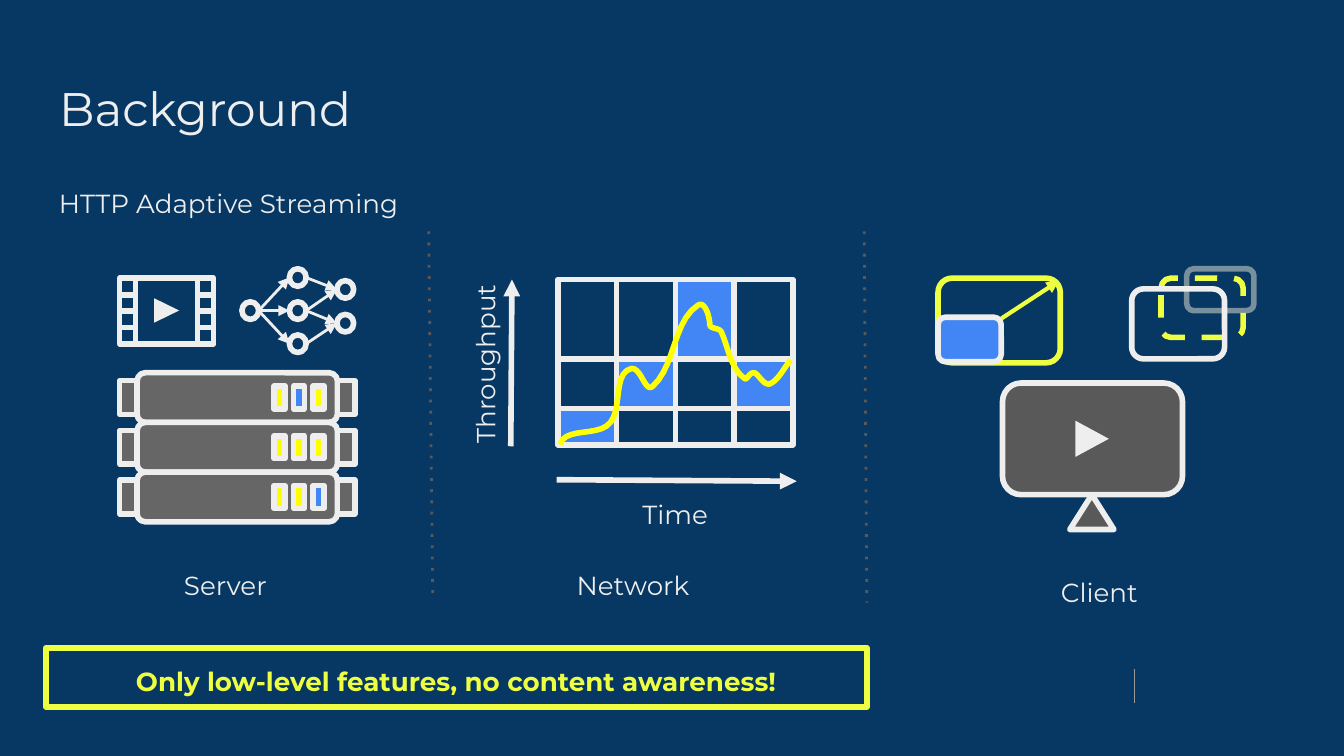
from dataclasses import dataclass
from lxml.etree import SubElement
from pptx import Presentation
from pptx.dml.color import RGBColor
from pptx.enum.shapes import MSO_CONNECTOR, MSO_SHAPE as Shape
from pptx.enum.text import MSO_ANCHOR, MSO_AUTO_SIZE, PP_ALIGN as Align
from pptx.oxml.ns import qn
from pptx.util import Inches, Pt

NAVY = RGBColor(0x07, 0x37, 0x63)
PALE = RGBColor(0xEE, 0xEE, 0xEE)
BLUE = RGBColor(0x42, 0x85, 0xF4)
YELLOW = RGBColor(0xFF, 0xFF, 0x00)
LIME = RGBColor(0xEE, 0xFF, 0x41)
STEEL = RGBColor(0x66, 0x66, 0x66)
DARK = RGBColor(0x59, 0x59, 0x59)
SLATE = RGBColor(0x78, 0x90, 0x9C)
RULE = RGBColor(0x99, 0x99, 0x99)

FONT = "Montserrat"
# Start point, then Bezier triples, in percent of the curve's box
THROUGHPUT_START = (0, 100)
THROUGHPUT_CURVES = [
    ((2, 87), (17, 95), (22, 84)), ((27, 73), (23, 49), (31, 46)),
    ((35, 45), (37, 63), (40, 59)), ((50, 45), (49, 12), (60, 1)),
    ((63, -2), (65, 10), (65, 15)), ((65, 18), (69, 17), (70, 20)),
    ((73, 31), (74, 46), (80, 53)), ((81, 55), (82, 49), (84, 49)),
    ((86, 49), (88, 58), (91, 57)), ((95, 54), (97, 46), (100, 40)),
]


@dataclass(frozen=True)
class Box:
    """A box in inches; its parts are given in percent of its size."""
    x: float
    y: float
    w: float
    h: float

    def point(self, x, y):
        return self.x + x * self.w / 100, self.y + y * self.h / 100

    def share(self, x, y, w, h):
        return Box(*self.point(x, y), w * self.w / 100, h * self.h / 100)

    def row(self, index, count):
        return self.share(0, 100 * index / count, 100, 100 / count)

    def emu(self):
        return [Inches(v) for v in (self.x, self.y, self.w, self.h)]


def apply_format(target, values):
    for key, value in values.items():
        setattr(target, key, value)


def style_line(drawn, color, width, dash=None, arrow=False):
    drawn.line.color.rgb = color
    drawn.line.width = Pt(width)
    outline = drawn._element.spPr.find(qn("a:ln"))
    if dash:
        SubElement(outline, qn("a:prstDash"), val=dash)
    if arrow:
        SubElement(outline, qn("a:tailEnd"), type="triangle")


def add_form(shapes, kind, box, fill=None, line=PALE, dash=None, rotation=0):
    form = shapes.add_shape(kind, *box.emu())
    form.shadow.inherit = False
    form.rotation = rotation
    if fill is None:
        form.fill.background()
    else:
        form.fill.solid()
        form.fill.fore_color.rgb = fill
    if line is None:
        form.line.fill.background()
    else:
        style_line(form, line, 3, dash)
    return form


def add_line(shapes, start, end, color, width, dash=None, arrow=False):
    ends = [Inches(v) for v in (*start, *end)]
    connector = shapes.add_connector(MSO_CONNECTOR.STRAIGHT, *ends)
    style_line(connector, color, width, dash, arrow)
    SubElement(connector._element.spPr, qn("a:effectLst"))


def write(holder, text, align=Align.CENTER, spacing=1.15, size=14, color=PALE, bold=False):
    frame = holder.text_frame
    apply_format(frame, dict(text=text, word_wrap=True, auto_size=MSO_AUTO_SIZE.NONE,
                             vertical_anchor=MSO_ANCHOR.TOP, margin_left=Inches(0.1),
                             margin_top=Inches(0.1), margin_bottom=Inches(0.1),
                             margin_right=Inches(0.1 if align == Align.CENTER else 0)))
    paragraph = frame.paragraphs[0]
    apply_format(paragraph, dict(alignment=align, line_spacing=spacing))
    font = paragraph.runs[0].font
    apply_format(font, dict(name=FONT, size=Pt(size), bold=bold))
    font.color.rgb = color


def add_label(shapes, box, text, align=Align.CENTER, rotation=0):
    label = shapes.add_textbox(*box.emu())
    label.rotation = rotation
    write(label, text, align)


def draw_film(shapes, box):
    add_form(shapes, Shape.RECTANGLE, box.share(17, 0, 66, 100))
    for left in (0, 83):
        for i in range(4):
            add_form(shapes, Shape.RECTANGLE, box.share(left, 0, 17, 100).row(i, 4))
    add_form(shapes, Shape.ISOSCELES_TRIANGLE, box.share(37, 30, 26, 38),
             PALE, None, rotation=90)


def draw_neural_net(shapes, box):
    node_w, node_h = 15, 21
    layers = [[0.5], [0, 0.5, 1], [0.18, 0.69]]
    nodes = [[box.share(i * (100 - node_w) / 2, y * (100 - node_h), node_w, node_h)
              for y in layer] for i, layer in enumerate(layers)]
    for layer in nodes:
        for node in layer:
            add_form(shapes, Shape.OVAL, node)
    links = [[(0, 0), (0, 1), (0, 2)], [(0, 0), (1, 0), (1, 1), (2, 1)]]
    for i, pairs in enumerate(links):
        for source, target in pairs:
            add_line(shapes, nodes[i][source].point(100, 50),
                     nodes[i + 1][target].point(0, 50), PALE, 1.5, arrow=True)


def draw_rack_unit(shapes, box, lights):
    add_form(shapes, Shape.ROUNDED_RECTANGLE, box.share(7.4, 0, 85.2, 100), STEEL)
    for left in (0, 92.6):
        add_form(shapes, Shape.RECTANGLE, box.share(left, 16, 7.4, 68), STEEL)
    for i, light in enumerate(lights):
        add_form(shapes, Shape.RECTANGLE, box.share(65.7 + 8.3 * i, 27, 4.6, 46), light)


def draw_server(shapes, box):
    draw_film(shapes.add_group_shape().shapes, box.share(0, 3.7, 40, 25.8))
    draw_neural_net(shapes.add_group_shape().shapes, box.share(52, 0, 47.5, 32.8))
    rack = shapes.add_group_shape().shapes
    lights = [(YELLOW, BLUE, YELLOW), (YELLOW,) * 3, (YELLOW, YELLOW, BLUE)]
    for i, colors in enumerate(lights):
        draw_rack_unit(rack, box.share(0, 40.7, 100, 58.4).row(i, 3), colors)
    add_label(shapes, box.share(-10, 110.5, 110, 23), "Server")


def draw_throughput_curve(shapes, box):
    def to_emu(x, y):
        return tuple(Inches(v) for v in box.point(x, y))

    steps, start, points = 10, THROUGHPUT_START, []
    for first, second, end in THROUGHPUT_CURVES:
        for t in (k / steps for k in range(1, steps + 1)):
            weights = ((1 - t) ** 3, 3 * t * (1 - t) ** 2, 3 * t * t * (1 - t), t ** 3)
            points.append(to_emu(*(sum(w * v for w, v in zip(weights, axis))
                                   for axis in zip(start, first, second, end))))
        start = end
    builder = shapes.build_freeform(*to_emu(*THROUGHPUT_START))
    builder.add_line_segments(points, close=False)
    curve = builder.convert_to_shape()
    curve.shadow.inherit = False
    curve.fill.background()
    style_line(curve, YELLOW, 3)


def draw_network(shapes, box):
    # Bitrate grid with the chosen level of each segment filled
    plot = box.share(18.2, 0, 79.5, 64.7)
    group = shapes.add_group_shape().shapes
    levels = [(0, 48), (48, 30), (78, 22)]
    for column, chosen in enumerate((2, 1, 0, 1)):
        for i, (top, height) in enumerate(levels):
            add_form(group, Shape.RECTANGLE, plot.share(column * 25, top, 25, height),
                     BLUE if i == chosen else None)
    draw_throughput_curve(group, plot.share(1, 14.6, 98, 85.4))
    # Axes
    add_line(shapes, box.point(17.8, 78.4), box.point(99, 79), PALE, 3, arrow=True)
    add_line(shapes, box.point(2.3, 65.3), box.point(2.7, 0), PALE, 3, arrow=True)
    add_label(shapes, box.share(42.3, 78.5, 32, 23), "Time", Align.LEFT)
    add_label(shapes, box.share(-39.5, 20.5, 63.7, 23.7), "Throughput", Align.LEFT, 270)
    add_label(shapes, box.share(0, 106.3, 87.3, 23), "Network")


def draw_client(shapes, box):
    rounded, triangle = Shape.ROUNDED_RECTANGLE, Shape.ISOSCELES_TRIANGLE
    # Player: screen, play mark and stand
    player = shapes.add_group_shape().shapes
    add_form(player, rounded, box.share(20.4, 43.6, 57, 42.6), DARK)
    add_form(player, triangle, box.share(43, 58.5, 11.5, 12.8), PALE, None, rotation=90)
    add_form(player, triangle, box.share(41.7, 86.2, 14, 13.3), DARK)
    add_label(shapes, box.share(10.2, 110.3, 81.7, 22.6), "Client")
    # Scaling window
    scaling = shapes.add_group_shape().shapes
    add_form(scaling, rounded, box.share(0, 3.6, 38.7, 32.3), line=LIME)
    add_form(scaling, rounded, box.share(0, 18.5, 20, 17), BLUE)
    add_line(scaling, box.point(20, 19), box.point(38.3, 4.6), LIME, 2.25, arrow=True)
    # Frames in depth, far to near
    frames = shapes.add_group_shape().shapes
    add_form(frames, rounded, box.share(78.7, 0, 21.3, 16), line=SLATE)
    add_form(frames, rounded, box.share(70.6, 3.6, 26, 22.6), line=LIME, dash="dash")
    add_form(frames, rounded, box.share(61.3, 7.7, 29.4, 26.7))


def draw_header(slide, box):
    title = slide.shapes.title
    apply_format(title, dict(zip(("left", "top", "width", "height"),
                                 box.share(0, 0, 100, 52).emu())))
    write(title, "Background", Align.LEFT, 1, 25.2)
    add_label(slide.shapes, box.share(0, 63.6, 47, 36.4),
              "HTTP Adaptive Streaming", Align.LEFT)


def main():
    page = Box(0, 0, 10, 10 * 9 / 16)
    deck = Presentation()
    deck.slide_width, deck.slide_height = Inches(page.w), Inches(page.h)
    slide = deck.slides.add_slide(deck.slide_layouts[5])
    slide.background.fill.solid()
    slide.background.fill.fore_color.rgb = NAVY
    shapes = slide.shapes

    add_line(shapes, page.point(84.4, 88.5), page.point(84.4, 93), RULE, 0.75)
    draw_header(slide, Box(0.34, 0.49, 9.32, 1.21))
    draw_server(shapes, Box(0.89, 2, 1.75, 1.9))
    draw_network(shapes, Box(3.75, 2.08, 2.2, 1.9))
    draw_client(shapes, Box(6.98, 2, 2.35, 1.95))
    # Dividers between the three parts
    for top_x, end_x, end_y in ((31.9, 32.2, 79), (64.3, 64.5, 79.7)):
        add_line(shapes, page.point(top_x, 30.6), page.point(end_x, end_y), DARK, 1.5, "dot")
    # Takeaway
    takeaway = add_form(shapes, Shape.RECTANGLE, Box(0.34, 4.82, 6.11, 0.44), line=LIME)
    write(takeaway, "Only low-level features, no content awareness!", color=LIME, bold=True)
    deck.save("out.pptx")


if __name__ == "__main__":
    main()
